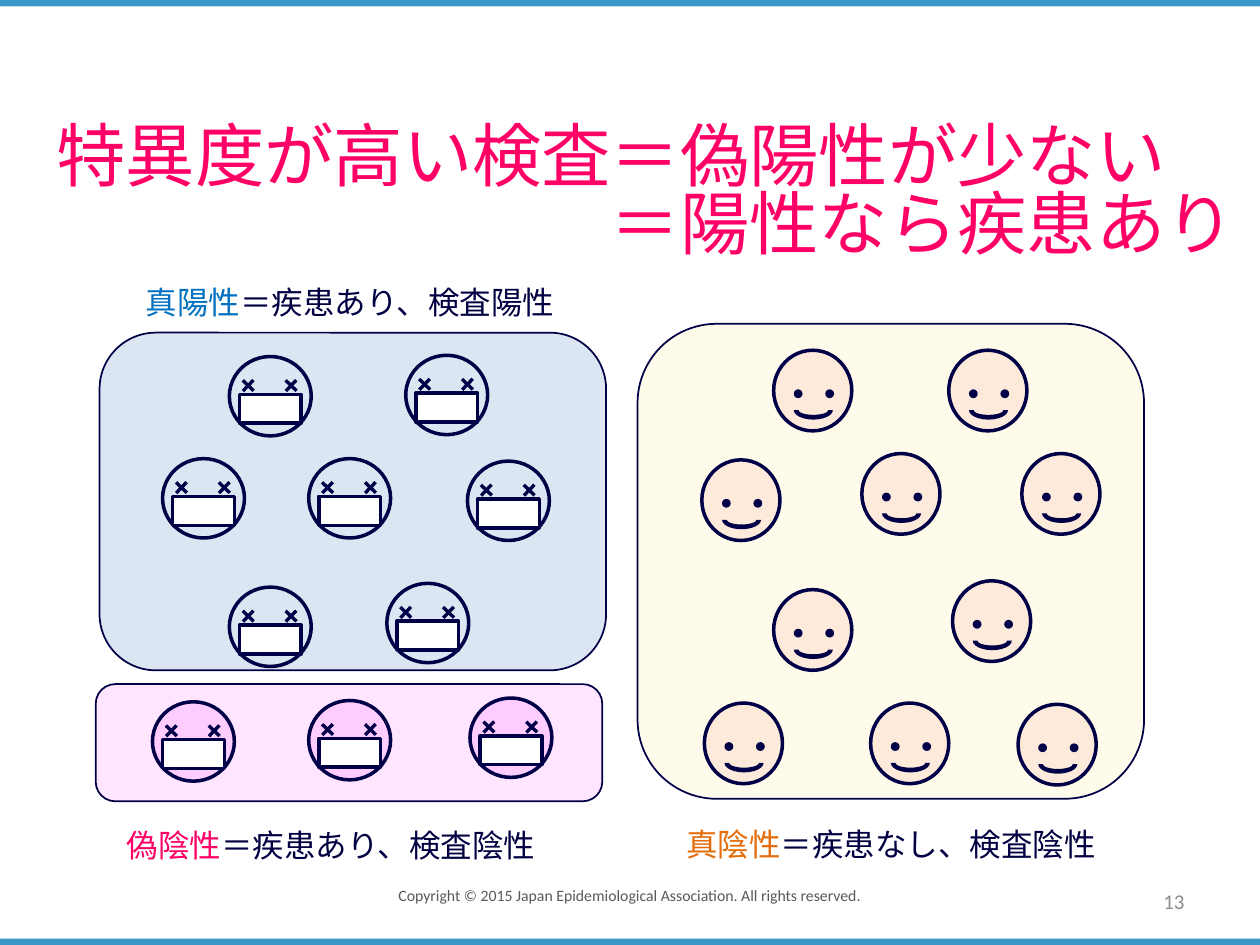
"""Build a slide on high-specificity tests with groups of patient and healthy faces."""
from lxml import etree
from pptx import Presentation
from pptx.dml.color import RGBColor
from pptx.enum.shapes import MSO_SHAPE
from pptx.enum.text import MSO_ANCHOR, PP_ALIGN
from pptx.oxml.ns import qn
from pptx.util import Inches, Pt

OVAL, RECT, ROUND = MSO_SHAPE.OVAL, MSO_SHAPE.RECTANGLE, MSO_SHAPE.ROUNDED_RECTANGLE
CROSS, ARC = MSO_SHAPE.CROSS, MSO_SHAPE.BLOCK_ARC
LEFT, CENTER, RIGHT = PP_ALIGN.LEFT, PP_ALIGN.CENTER, PP_ALIGN.RIGHT
TOP, MIDDLE = MSO_ANCHOR.TOP, MSO_ANCHOR.MIDDLE
JAPANESE, LATIN = "Noto Sans CJK JP", "Calibri"

COLORS = {
    "stripe": "3998C8", "ink": "000046", "label": "000042", "white": "FFFFFF",
    "pink": "FF0066", "blue": "0070C0", "orange": "E46C0A",
    "copyright": "595959", "number": "8C8C8C",
    "healthy_panel": "FFFBEB", "false_panel": "FFE5FF", "true_panel": "DCE6F2",
    "healthy_face": "FDEADA", "false_face": "FFCCFF",
}


def add_shape(shapes, kind, left, top, width, height, fill, line=None):
    shape = shapes.add_shape(kind, Inches(left), Inches(top), Inches(width), Inches(height))
    shape.shadow.inherit = False
    shape.fill.solid()
    shape.fill.fore_color.rgb = RGBColor.from_string(COLORS[fill])
    if line:
        shape.line.color.rgb = RGBColor.from_string(COLORS["ink"])
        shape.line.width = Pt(line)
    else:
        shape.line.fill.background()
    return shape


def add_text(spans, left, top, width, height, size=18, font=JAPANESE,
             align=LEFT, anchor=TOP, wrap=True, spacing=None, hanging=0):
    box = page.shapes.add_textbox(Inches(left), Inches(top), Inches(width), Inches(height))
    frame = box.text_frame
    frame.word_wrap = wrap
    frame.vertical_anchor = anchor
    para = frame.paragraphs[0]
    para.alignment = align
    if spacing:
        para.line_spacing = spacing
    if hanging:
        properties = para._p.get_or_add_pPr()
        properties.set("marL", str(Inches(hanging)))
        properties.set("indent", str(-Inches(hanging)))
    for index, (text, color) in enumerate(spans):
        if index and hanging:
            para.add_line_break()
        span = para.add_run()
        span.text = text
        span.font.size = Pt(size)
        span.font.name = font
        span.font.color.rgb = RGBColor.from_string(COLORS[color])
        east_asian = etree.SubElement(span._r.get_or_add_rPr(), qn("a:ea"))
        east_asian.set("typeface", font)


deck = Presentation()
deck.slide_width, deck.slide_height = Inches(10), Inches(7.5)
page = deck.slides.add_slide(deck.slide_layouts[6])

for stripe_top in (0, 7.45):
    add_shape(page.shapes, RECT, 0, stripe_top, 10, 0.05, "stripe")

add_shape(page.shapes, ROUND, 5.06, 2.57, 4.02, 3.77, "healthy_panel", 1)
add_shape(page.shapes, ROUND, 0.76, 5.43, 4.02, 0.93, "false_panel", 1)
add_shape(page.shapes, ROUND, 0.79, 2.64, 4.02, 2.68, "true_panel", 1)

add_text([("特異度が高い検査＝偽陽性が少ない", "pink"), ("＝陽性なら疾患あり", "pink")],
         0.35, 1.04, 9.81, 1.02, size=39.6, anchor=MIDDLE, spacing=0.81, hanging=4.4)

healthy_places = [
    (6.14, 2.78), (7.53, 2.78),
    (5.57, 3.65), (6.84, 3.6), (8.11, 3.6),
    (6.14, 4.68), (7.56, 4.61),
    (5.59, 5.58), (6.91, 5.58), (8.08, 5.59),
]
for left, top in healthy_places:
    face = page.shapes.add_group_shape().shapes
    add_shape(face, OVAL, left, top, 0.62, 0.64, "healthy_face", 2)
    for eye_offset in (0.16, 0.41):
        add_shape(face, OVAL, left + eye_offset, top + 0.31, 0.07, 0.07, "ink")
    mouth = add_shape(face, ARC, left + 0.16, top + 0.4, 0.31, 0.15, "ink")
    mouth.rotation = 180

patient_places = {
    "true_panel": [(1.82, 2.83), (3.22, 2.82), (1.29, 3.64), (2.45, 3.64),
                   (3.71, 3.66), (1.82, 4.66), (3.07, 4.63)],
    "false_face": [(1.21, 5.57), (2.45, 5.56), (3.73, 5.54)],
}
for face_color, places in patient_places.items():
    for left, top in places:
        face = page.shapes.add_group_shape().shapes
        add_shape(face, OVAL, left, top, 0.65, 0.63, face_color, 2)
        add_shape(face, RECT, left + 0.08, top + 0.3, 0.49, 0.23, "white", 2)
        for eye_offset in (0.09, 0.43):
            eye = add_shape(face, CROSS, left + eye_offset, top + 0.17, 0.12, 0.12, "ink")
            eye.adjustments[0] = 0.39
            eye.rotation = 43.8

add_text([("真陽性", "blue"), ("＝疾患あり、検査陽性", "label")], 1.06, 2.2, 3.48, 0.4, wrap=False)
add_text([("偽陰性", "pink"), ("＝疾患あり、検査陰性", "label")], 0.91, 6.51, 5, 0.4)
add_text([("真陰性", "orange"), ("＝疾患なし、検査陰性", "label")], 5.35, 6.5, 5, 0.4)

add_text([("Copyright © 2015 Japan Epidemiological Association. All rights reserved.", "copyright")],
         2.87, 6.98, 4.25, 0.25, size=9, font=LATIN, align=CENTER)
add_text([("13", "number")], 7.17, 6.95, 2.33, 0.4,
         size=12, font=LATIN, align=RIGHT, anchor=MIDDLE)

deck.save("out.pptx")
